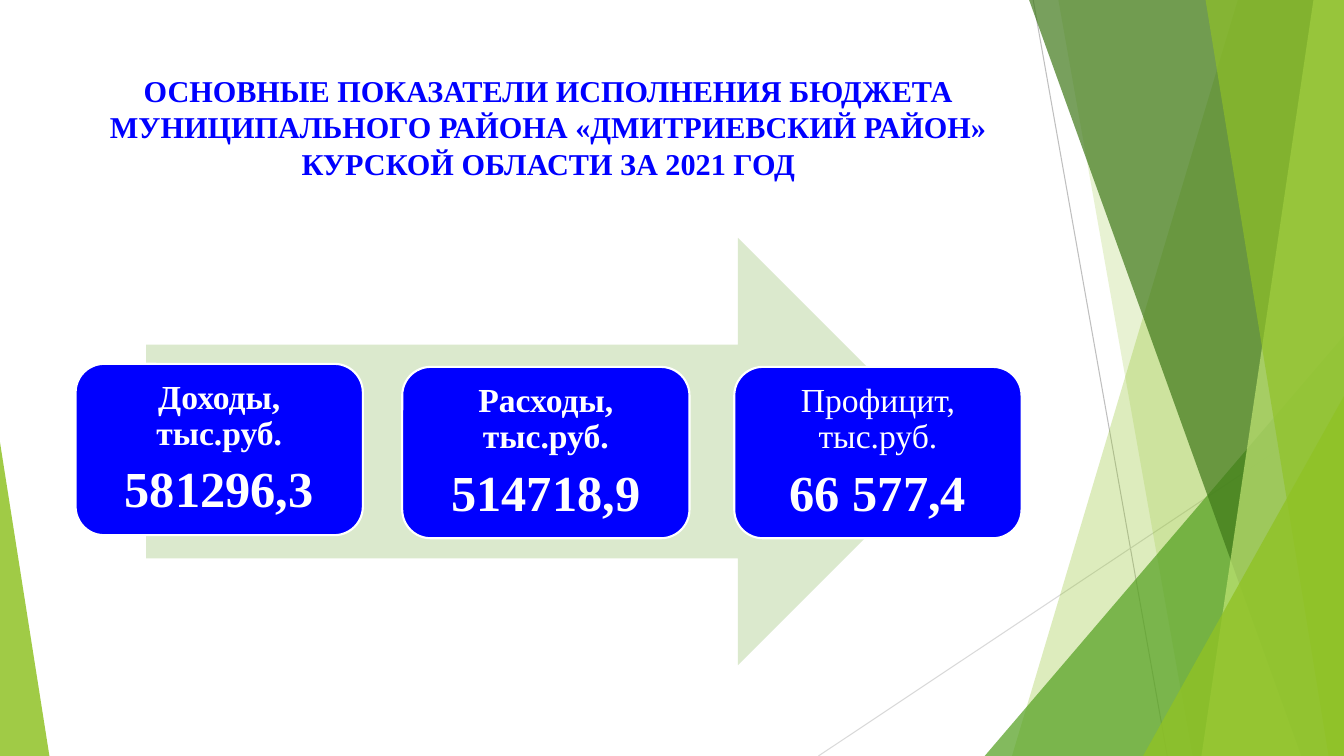
from dataclasses import dataclass

from lxml.etree import SubElement
from pptx import Presentation
from pptx.dml.color import RGBColor
from pptx.enum.shapes import MSO_CONNECTOR as Connector, MSO_SHAPE as Preset
from pptx.enum.text import MSO_ANCHOR as Anchor, PP_ALIGN as Align
from pptx.oxml.ns import qn
from pptx.util import Pt

WIDTH, HEIGHT = 960, 540


@dataclass(frozen=True)
class Theme:
    font: str = "Times New Roman"
    blue: str = "0000FF"
    white: str = "FFFFFF"
    arrow: str = "DBE9CD"
    lime: str = "90C226"
    pale_lime: str = "C0E474"
    green: str = "54A021"
    dark_green: str = "3F7819"
    gray: str = "BFBFBF"
    light_gray: str = "D9D9D9"
    title_size: float = 21.6
    label_size: float = 24
    value_size: float = 36


def apply(target, values):
    for name, value in values.items():
        setattr(target, name, value)


class SlideBuilder:
    def __init__(self, slide, theme):
        self.slide = slide
        self.shapes = slide.shapes
        self.theme = theme

    def line(self, start, end, color):
        points = [Pt(value) for value in (*start, *end)]
        line = self.shapes.add_connector(Connector.STRAIGHT, *points)
        line.line.color.rgb = RGBColor.from_string(color)
        line.line.width = Pt(0.75)
        SubElement(line._element.spPr, qn("a:effectLst"))

    def paint(self, shape, color, opacity=100):
        shape.shadow.inherit = False
        shape.fill.solid()
        shape.fill.fore_color.rgb = RGBColor.from_string(color)
        shape.line.fill.background()
        if opacity < 100:
            color_element = shape._element.spPr.find(qn("a:solidFill"))[0]
            SubElement(color_element, qn("a:alpha"), val=str(opacity * 1000))

    def facet(self, top_x, bottom_x, color, opacity):
        outline = self.shapes.build_freeform(Pt(top_x), 0)
        corners = [(WIDTH, 0), (WIDTH, HEIGHT), (bottom_x, HEIGHT)]
        outline.add_line_segments([(Pt(x), Pt(y)) for x, y in corners])
        self.paint(outline.convert_to_shape(), color, opacity)

    def preset(self, kind, box, color, opacity=100):
        shape = self.shapes.add_shape(kind, *[Pt(value) for value in box])
        self.paint(shape, color, opacity)
        return shape

    def triangle(self, box, apex, color, opacity):
        shape = self.preset(Preset.ISOSCELES_TRIANGLE, box, color, opacity)
        shape.adjustments[0] = apex

    def fill_paragraph(self, paragraph, text, size, color, bold=True):
        paragraph.text = text
        paragraph.alignment = Align.CENTER
        apply(paragraph.font, {"name": self.theme.font, "size": Pt(size), "bold": bold})
        paragraph.font.color.rgb = RGBColor.from_string(color)

    def title(self, box, text):
        shape = self.shapes.add_textbox(*[Pt(value) for value in box])
        frame = shape.text_frame
        apply(frame, {"word_wrap": True, "vertical_anchor": Anchor.TOP})
        self.fill_paragraph(
            frame.paragraphs[0], text, self.theme.title_size, self.theme.blue)

    def card(self, left, top, label, value, label_bold):
        theme = self.theme
        shape = self.preset(Preset.ROUNDED_RECTANGLE, (left, top, 205.2, 122.4), theme.blue)
        shape.line.color.rgb = RGBColor.from_string(theme.white)
        shape.line.width = Pt(1.5)
        frame = shape.text_frame
        margins = dict.fromkeys(
            ("margin_left", "margin_top", "margin_right", "margin_bottom"), Pt(7.2))
        apply(frame, {"word_wrap": True, "vertical_anchor": Anchor.MIDDLE, **margins})
        rows = [(frame.paragraphs[0], label, theme.label_size, label_bold),
                (frame.add_paragraph(), value, theme.value_size, True)]
        for paragraph, text, size, bold in rows:
            self.fill_paragraph(paragraph, text, size, theme.white, bold)
            apply(paragraph, {"line_spacing": 0.9, "space_after": Pt(size * 0.35)})


def main():
    presentation = Presentation()
    apply(presentation, {"slide_width": Pt(WIDTH), "slide_height": Pt(HEIGHT)})
    theme = Theme()
    builder = SlideBuilder(
        presentation.slides.add_slide(presentation.slide_layouts[6]), theme)

    builder.line((738, 0), (833.8, HEIGHT), theme.gray)
    builder.line((WIDTH, 290), (584.6, HEIGHT), theme.light_gray)
    builder.facet(884.2, 722.9, theme.lime, 30)
    builder.facet(756, 851.8, theme.lime, 20)
    builder.triangle((703.4, 239.8, 256.6, 300.2), 1, theme.green, 72)
    builder.facet(735.1, 929.5, theme.dark_green, 70)
    builder.facet(938.2, 858.2, theme.pale_lime, 70)
    builder.facet(861.1, 949, theme.lime, 65)
    builder.triangle((816.5, 283, 143.5, 257), 1, theme.lime, 80)
    builder.triangle((0, 316, 35.3, 224), 0, theme.lime, 85)

    builder.title((53.3, 48.2, 676.8, 103.7),
                  "ОСНОВНЫЕ ПОКАЗАТЕЛИ ИСПОЛНЕНИЯ БЮДЖЕТА\v"
                  "МУНИЦИПАЛЬНОГО РАЙОНА «ДМИТРИЕВСКИЙ РАЙОН»\v"
                  "КУРСКОЙ ОБЛАСТИ ЗА 2021 ГОД")
    builder.preset(Preset.RIGHT_ARROW, (104.4, 169.9, 575.3, 305.3), theme.arrow)
    cards = [
        (54, 259.9, "Доходы, тыс.руб.", "581296,3", True),
        (287.3, 262.1, "Расходы, тыс.руб.", "514718,9", True),
        (524.5, 262.1, "Профицит, тыс.руб.", "66 577,4", False),
    ]
    for card in cards:
        builder.card(*card)

    presentation.save("out.pptx")


if __name__ == "__main__":
    main()
